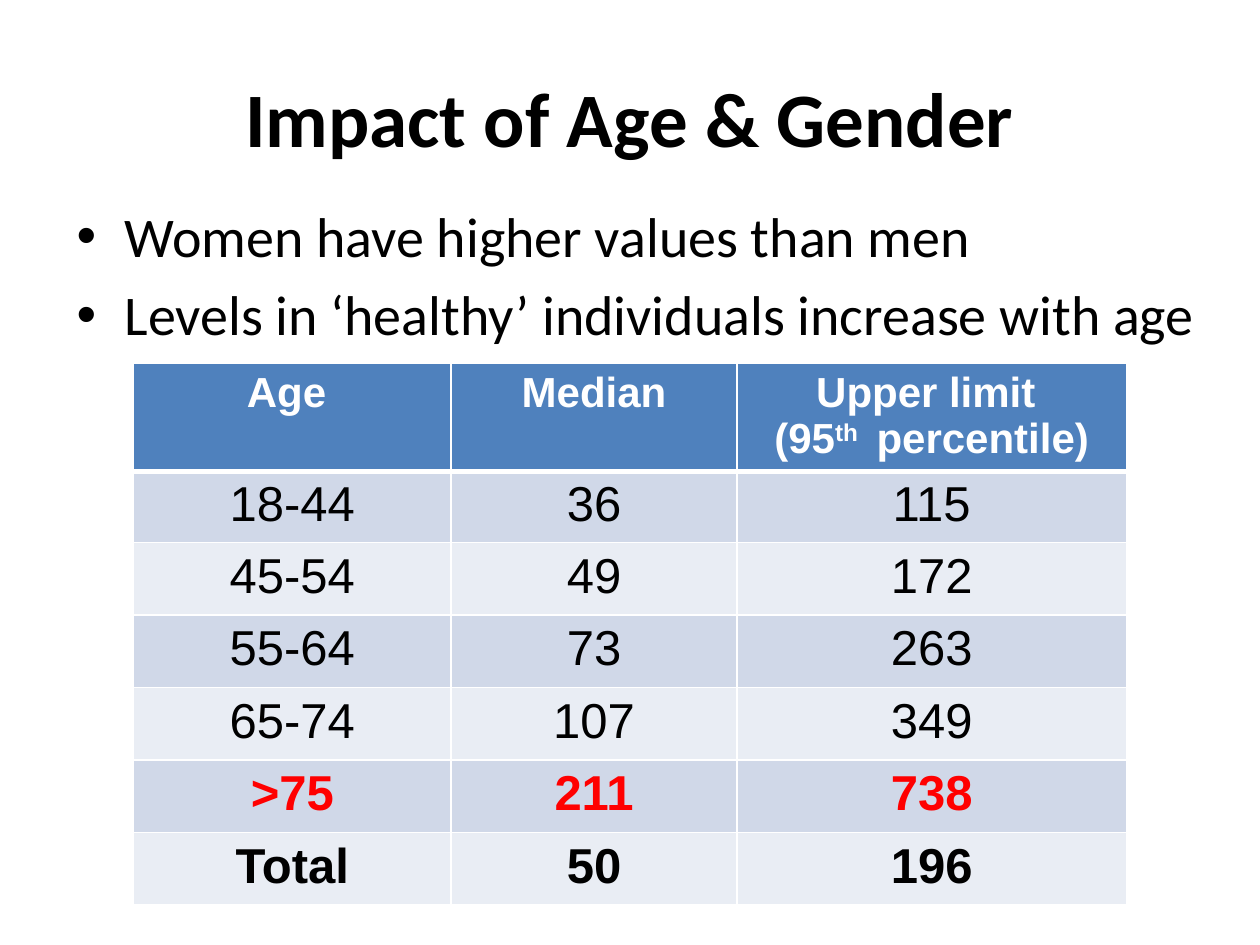
from lxml.etree import SubElement
from pptx import Presentation
from pptx.dml.color import RGBColor
from pptx.enum.text import MSO_ANCHOR, PP_ALIGN
from pptx.oxml.ns import qn
from pptx.util import Inches, Pt

HUES = {"ink": "000000", "white": "FFFFFF", "head": "4F81BD",
        "dark": "D0D8E8", "light": "E9EDF4", "alert": "FF0000"}

HEAD = ["Age ", "Median", "Upper limit \n(95^th ^ percentile)"]
ROWS = [
    ["18-44", "36", "115"],
    ["45-54", "49", "172"],
    ["55-64", "73", "263"],
    ["65-74", "107", "349"],
    [">75", "211", "738"],
    ["Total", "50", "196"],
]
POINTS = ["Women have higher values than men",
          "Levels in ‘healthy’ individuals increase with age"]


class Deck:
    cols, rows = 100, 75
    title_font = {"name": "Calibri", "size": Pt(44), "bold": True}
    point_font = {"name": "Calibri", "size": Pt(32), "bold": False}
    head_font = {"name": "Arial", "size": Pt(24), "bold": True}
    cell_font = {"name": "Arial", "size": Pt(28), "bold": False}

    def __init__(self):
        self.prs = Presentation()
        self.prs.slide_width, self.prs.slide_height = Inches(10), Inches(7.5)
        self.slide = self.prs.slides.add_slide(self.prs.slide_layouts[5])

    def wide(self, n):
        return round(self.prs.slide_width * n / self.cols)

    def high(self, n):
        return round(self.prs.slide_height * n / self.rows)

    def area(self, x, y, w, h):
        return self.wide(x), self.high(y), self.wide(w), self.high(h)

    def style(self, item, values):
        for key, value in values.items():
            setattr(item, key, value)

    def words(self, para, text, font, hue="ink"):
        for i, part in enumerate(text.split("^")):
            run = para.add_run()
            run.text = part
            self.style(run.font, font)
            run.font.color.rgb = RGBColor.from_string(HUES[hue])
            if i % 2:
                run._r.get_or_add_rPr().set("baseline", "30000")

    def title(self, text, area):
        box = self.slide.shapes.title
        self.style(box, dict(zip(("left", "top", "width", "height"), self.area(*area))))
        self.style(box.text_frame, {"word_wrap": True, "vertical_anchor": MSO_ANCHOR.MIDDLE})
        para = box.text_frame.paragraphs[0]
        para.alignment = PP_ALIGN.CENTER
        self.words(para, text, self.title_font)

    def bullets(self, points, area):
        frame = self.slide.shapes.add_textbox(*self.area(*area)).text_frame
        frame.word_wrap = True
        for i, text in enumerate(points):
            para = frame.add_paragraph() if i else frame.paragraphs[0]
            para.space_before = Pt(6.4)
            props = para._p.get_or_add_pPr()
            props.set("marL", str(Inches(0.38)))
            props.set("indent", str(-Inches(0.38)))
            SubElement(props, qn("a:buFont"), typeface="Arial")
            SubElement(props, qn("a:buChar"), char="•")
            self.words(para, text, self.point_font)

    def border(self, cell, side, width):
        line = SubElement(cell._tc.get_or_add_tcPr(), qn("a:" + side), w=str(Pt(width)))
        fill = SubElement(line, qn("a:solidFill"))
        SubElement(fill, qn("a:srgbClr"), val=HUES["white"])

    def cell(self, cell, text, font, hue, fill, top=1, low=1):
        for side, width in {"lnL": 1, "lnR": 1, "lnT": top, "lnB": low}.items():
            self.border(cell, side, width)
        cell.fill.solid()
        cell.fill.fore_color.rgb = RGBColor.from_string(HUES[fill])
        for i, line in enumerate(text.split("\n")):
            para = cell.text_frame.add_paragraph() if i else cell.text_frame.paragraphs[0]
            para.alignment = PP_ALIGN.CENTER
            self.words(para, line, font, hue)

    def table(self, head, rows, spot, widths, heights):
        area = self.area(*spot, sum(widths), sum(heights))
        grid = self.slide.shapes.add_table(len(heights), len(widths), *area).table
        for col, width in zip(grid.columns, widths):
            col.width = self.wide(width)
        for row, height in zip(grid.rows, heights):
            row.height = self.high(height)
        for c, text in enumerate(head):
            cell = grid.cell(0, c)
            cell.margin_bottom = Inches(0.01)
            self.cell(cell, text, self.head_font, "white", "head", low=3)
        for r, row in enumerate(rows, 1):
            font = {**self.cell_font, "bold": row[0] in (">75", "Total")}
            hue = "alert" if row[0] == ">75" else "ink"
            fill = "dark" if r % 2 else "light"
            for c, text in enumerate(row):
                self.cell(grid.cell(r, c), text, font, hue, fill, top=3 if r == 1 else 1)


def main():
    deck = Deck()
    deck.title("Impact of Age & Gender", (5, 3, 90, 12.5))
    deck.bullets(POINTS, (5.1, 15.5, 92.1, 49.5))
    deck.table(HEAD, ROWS, (10.6, 28.8), (25.2, 22.7, 30.9), [8.3, 5.4] + [5.75] * 5)
    deck.prs.save("out.pptx")


if __name__ == "__main__":
    main()
